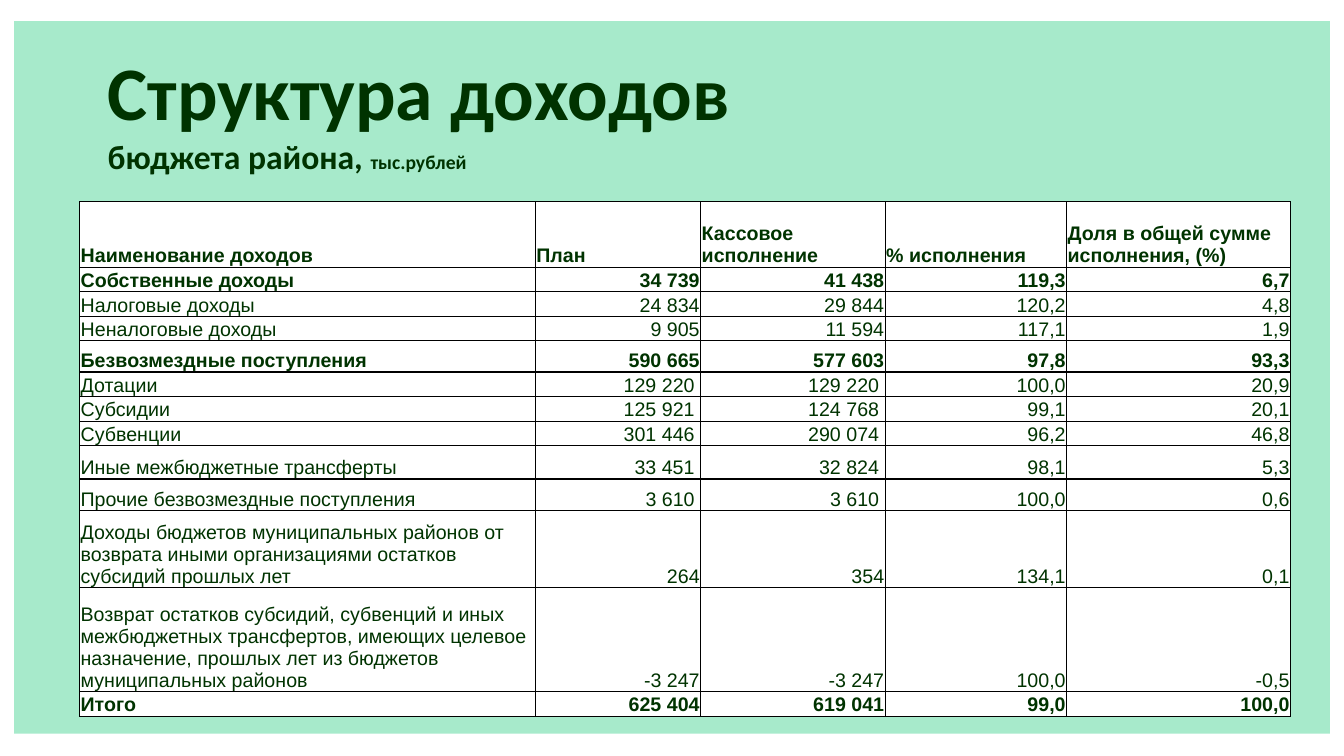
from dataclasses import dataclass

from lxml.etree import SubElement
from pptx import Presentation
from pptx.dml.color import RGBColor
from pptx.enum.shapes import MSO_SHAPE
from pptx.enum.text import MSO_ANCHOR, MSO_AUTO_SIZE, PP_ALIGN
from pptx.oxml.ns import qn
from pptx.util import Inches, Pt


@dataclass(frozen=True)
class Theme:
    panel: str = "A7EACB"
    paper: str = "FFFFFF"
    text: str = "003300"
    border: str = "000000"
    heading_font: str = "Calibri"
    table_font: str = "Arial"
    title_size: int = 54
    subtitle_size: int = 24
    body_size: int = 14
    border_width: int = 1


def apply_format(target, values):
    for name, value in values.items():
        setattr(target, name, value)


class SlideBuilder:
    def __init__(self, slide, theme):
        self.slide = slide
        self.theme = theme

    def add_text(self, paragraph, text, font, size, bold):
        run = paragraph.add_run()
        run.text = text
        apply_format(run.font, {"name": font, "size": Pt(size), "bold": bold})
        run.font.color.rgb = RGBColor.from_string(self.theme.text)

    def panel(self, left, top, width, height):
        shape = self.slide.shapes.add_shape(
            MSO_SHAPE.RECTANGLE, Inches(left), Inches(top), Inches(width), Inches(height))
        shape.shadow.inherit = False
        shape.fill.solid()
        shape.fill.fore_color.rgb = RGBColor.from_string(self.theme.panel)
        shape.line.fill.background()

    def heading(self, left, top, width, height, lines):
        shape = self.slide.shapes.add_textbox(
            Inches(left), Inches(top), Inches(width), Inches(height))
        frame = shape.text_frame
        apply_format(frame, {"word_wrap": True, "auto_size": MSO_AUTO_SIZE.SHAPE_TO_FIT_TEXT})
        for index, line in enumerate(lines):
            paragraph = frame.add_paragraph() if index else frame.paragraphs[0]
            for text, size in line:
                self.add_text(paragraph, text, self.theme.heading_font, size, True)

    def border(self, cell):
        properties = cell._tc.get_or_add_tcPr()
        for side in ("a:lnL", "a:lnR", "a:lnT", "a:lnB"):
            line = SubElement(properties, qn(side), w=str(Pt(self.theme.border_width)))
            fill = SubElement(line, qn("a:solidFill"))
            SubElement(fill, qn("a:srgbClr"), val=self.theme.border)

    def cell(self, cell, text, bold, alignment, margin_right):
        self.border(cell)
        cell.fill.solid()
        cell.fill.fore_color.rgb = RGBColor.from_string(self.theme.paper)
        apply_format(cell, {
            "vertical_anchor": MSO_ANCHOR.BOTTOM,
            "margin_left": Inches(0.01),
            "margin_right": Inches(margin_right),
            "margin_top": Inches(0.01),
            "margin_bottom": 0,
        })
        paragraph = cell.text_frame.paragraphs[0]
        paragraph.alignment = alignment
        self.add_text(paragraph, text, self.theme.table_font, self.theme.body_size, bold)

    def table(self, left, top, widths, heights, rows, bold_rows, inset_rows):
        table = self.slide.shapes.add_table(
            len(rows), len(widths), Inches(left), Inches(top),
            Inches(sum(widths)), Inches(sum(heights))).table
        apply_format(table, {"first_row": False, "horz_banding": False})
        for column, width in zip(table.columns, widths):
            column.width = Inches(width)
        for row, height in zip(table.rows, heights):
            row.height = Inches(height)
        for row_index, values in enumerate(rows):
            for column_index, text in enumerate(values):
                is_number = row_index > 0 and column_index > 0
                is_inset = row_index in inset_rows and column_index in (1, 2)
                self.cell(
                    table.cell(row_index, column_index), text, row_index in bold_rows,
                    PP_ALIGN.RIGHT if is_number else PP_ALIGN.LEFT,
                    0.06 if is_inset else 0.01)


INCOME_ROWS = [
    ("Наименование доходов", "План", "Кассовое исполнение", "% исполнения",
     "Доля в общей сумме исполнения, (%)"),
    ("Собственные доходы", "34 739", "41 438", "119,3", "6,7"),
    ("Налоговые доходы", "24 834", "29 844", "120,2", "4,8"),
    ("Неналоговые доходы", "9 905", "11 594", "117,1", "1,9"),
    ("Безвозмездные поступления", "590 665", "577 603", "97,8", "93,3"),
    ("Дотации", "129 220", "129 220", "100,0", "20,9"),
    ("Субсидии", "125 921", "124 768", "99,1", "20,1"),
    ("Субвенции", "301 446", "290 074", "96,2", "46,8"),
    ("Иные межбюджетные трансферты", "33 451", "32 824", "98,1", "5,3"),
    ("Прочие безвозмездные поступления", "3 610", "3 610", "100,0", "0,6"),
    ("Доходы бюджетов муниципальных районов от возврата иными организациями "
     "остатков субсидий прошлых лет", "264", "354", "134,1", "0,1"),
    ("Возврат остатков субсидий, субвенций и иных межбюджетных трансфертов, "
     "имеющих целевое назначение, прошлых лет из бюджетов муниципальных районов",
     "-3 247", "-3 247", "100,0", "-0,5"),
    ("Итого", "625 404", "619 041", "99,0", "100,0"),
]
COLUMN_WIDTHS = [4.52, 1.64, 1.83, 1.8, 2.22]
SINGLE_LINE = 0.24
TALL_ROWS = {0: 0.65, 4: 0.31, 8: 0.33, 9: 0.31, 10: 0.77, 11: 1.03}


def main():
    presentation = Presentation()
    apply_format(presentation, {"slide_width": Inches(13.33), "slide_height": Inches(7.5)})
    theme = Theme()
    builder = SlideBuilder(presentation.slides.add_slide(presentation.slide_layouts[6]), theme)
    builder.panel(0.14, 0.21, 13.05, 7.07)
    builder.heading(0.97, 0.4, 12.12, 1.41, [
        [("Структура доходов", theme.title_size)],
        [("бюджета района, ", theme.subtitle_size), ("тыс.рублей", theme.body_size)],
    ])
    heights = [TALL_ROWS.get(index, SINGLE_LINE) for index in range(len(INCOME_ROWS))]
    builder.table(0.79, 2, COLUMN_WIDTHS, heights, INCOME_ROWS,
                  bold_rows=(0, 1, 4, 12), inset_rows=range(5, 10))
    presentation.save("out.pptx")


if __name__ == "__main__":
    main()
